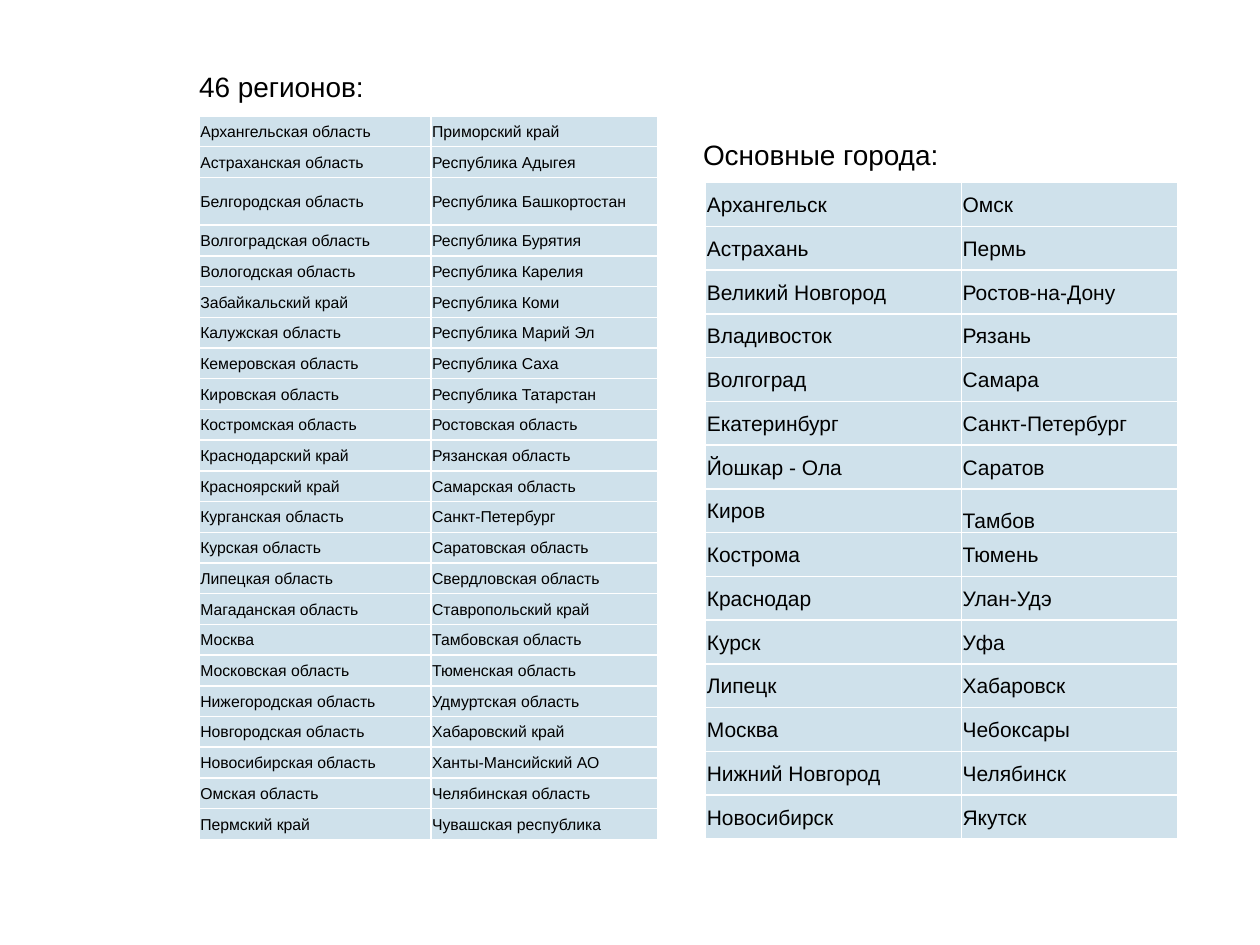
"""Builds the slide listing 46 regions and the main cities in two tables."""
from lxml import etree
from pptx import Presentation
from pptx.dml.color import RGBColor
from pptx.enum.text import MSO_ANCHOR, MSO_AUTO_SIZE, PP_ALIGN
from pptx.oxml.ns import qn
from pptx.util import Inches, Pt

TOP, MIDDLE, BOTTOM = MSO_ANCHOR.TOP, MSO_ANCHOR.MIDDLE, MSO_ANCHOR.BOTTOM
LEFT = PP_ALIGN.LEFT
NO_AUTOFIT = MSO_AUTO_SIZE.NONE
TITLE_ONLY = 5

THEME = {
    "font": "Arial", "ink": "000000", "cell": "438BB0", "cell_alpha": 25,
    "border": "FFFFFF", "border_pt": 1,
    "heading_pt": 16, "regions_pt": 9, "cities_pt": 12,
}

HEADINGS = [
    {"text": "46 регионов:", "indent": 0, "before": 0},
    {"text": "Основные города:", "indent": 4, "before": 20},
]

REGIONS = [
    ("Архангельская область", "Приморский край"),
    ("Астраханская область", "Республика Адыгея"),
    ("Белгородская область", "Республика Башкортостан"),
    ("Волгоградская область", "Республика Бурятия"),
    ("Вологодская область", "Республика Карелия"),
    ("Забайкальский край", "Республика Коми"),
    ("Калужская область", "Республика Марий Эл"),
    ("Кемеровская область", "Республика Саха"),
    ("Кировская область", "Республика Татарстан"),
    ("Костромская область", "Ростовская область"),
    ("Краснодарский край", "Рязанская область"),
    ("Красноярский край", "Самарская область"),
    ("Курганская область", "Санкт-Петербург"),
    ("Курская область", "Саратовская область"),
    ("Липецкая область", "Свердловская область"),
    ("Магаданская область", "Ставропольский край"),
    ("Москва", "Тамбовская область"),
    ("Московская область", "Тюменская область"),
    ("Нижегородская область", "Удмуртская область"),
    ("Новгородская область", "Хабаровский край"),
    ("Новосибирская область", "Ханты-Мансийский АО"),
    ("Омская область", "Челябинская область"),
    ("Пермский край", "Чувашская республика"),
]

CITIES = [
    ("Архангельск", "Омск"),
    ("Астрахань", "Пермь"),
    ("Великий Новгород", "Ростов-на-Дону"),
    ("Владивосток", "Рязань"),
    ("Волгоград", "Самара"),
    ("Екатеринбург", "Санкт-Петербург"),
    ("Йошкар - Ола", "Саратов"),
    ("Киров", "Тамбов"),
    ("Кострома", "Тюмень"),
    ("Краснодар", "Улан-Удэ"),
    ("Курск", "Уфа"),
    ("Липецк", "Хабаровск"),
    ("Москва", "Чебоксары"),
    ("Нижний Новгород", "Челябинск"),
    ("Новосибирск", "Якутск"),
]

TABLES = [
    {"rows": REGIONS, "left": 1.58, "top": 0.92, "height": 5.75,
     "columns": (1.84, 1.8), "size": THEME["regions_pt"],
     "tall_rows": {"Белгородская область": 0.38}, "low_cells": ()},
    {"rows": CITIES, "left": 5.6, "top": 1.45, "height": 5.21,
     "columns": (2.03, 1.72), "size": THEME["cities_pt"],
     "tall_rows": {}, "low_cells": ("Тамбов",)},
]


def write(paragraph, text, *, size, indent=0, before=0):
    properties = paragraph._p.get_or_add_pPr()
    properties.set("marL", str(Inches(indent)))
    properties.set("indent", "0")
    paragraph.alignment = LEFT
    paragraph.space_before = Pt(before)
    run = paragraph.add_run()
    run.text = text
    run.font.name = THEME["font"]
    run.font.size = Pt(size)
    run.font.color.rgb = RGBColor.from_string(THEME["ink"])


def paint_cell(cell):
    cell.fill.solid()
    cell.fill.fore_color.rgb = RGBColor.from_string(THEME["cell"])
    properties = cell._tc.get_or_add_tcPr()
    color = properties.find(qn("a:solidFill"))[0]
    etree.SubElement(color, qn("a:alpha"), val=str(THEME["cell_alpha"] * 1000))
    for position, side in enumerate(("a:lnL", "a:lnR", "a:lnT", "a:lnB")):
        border = etree.Element(qn(side), w=str(Pt(THEME["border_pt"])))
        fill = etree.SubElement(border, qn("a:solidFill"))
        etree.SubElement(fill, qn("a:srgbClr"), val=THEME["border"])
        properties.insert(position, border)


def add_headings(slide):
    title = slide.shapes.title
    title.left, title.top = Inches(1.48), Inches(0.5)
    title.width, title.height = Inches(7.87), Inches(6.33)
    frame = title.text_frame
    frame.word_wrap = True
    frame.auto_size = NO_AUTOFIT
    frame.vertical_anchor = TOP
    for index, heading in enumerate(HEADINGS):
        paragraph = frame.add_paragraph() if index else frame.paragraphs[0]
        write(paragraph, size=THEME["heading_pt"], **heading)


def add_listing(slide, listing):
    rows, columns, tall_rows = listing["rows"], listing["columns"], listing["tall_rows"]
    table = slide.shapes.add_table(
        len(rows), len(columns), Inches(listing["left"]), Inches(listing["top"]),
        Inches(sum(columns)), Inches(listing["height"])).table
    table.first_row = table.horz_banding = False
    for column, width in zip(table.columns, columns):
        column.width = Inches(width)
    row_height = (listing["height"] - sum(tall_rows.values())) / (len(rows) - len(tall_rows))
    for row, names in zip(table.rows, rows):
        row.height = Inches(tall_rows.get(names[0], row_height))
        for cell, name in zip(row.cells, names):
            cell.margin_left = cell.margin_right = cell.margin_top = Inches(0.01)
            cell.margin_bottom = 0
            cell.vertical_anchor = BOTTOM if name in listing["low_cells"] else MIDDLE
            paint_cell(cell)
            write(cell.text_frame.paragraphs[0], name, size=listing["size"])


def main():
    deck = Presentation()
    deck.slide_width, deck.slide_height = Inches(10), Inches(7.5)
    slide = deck.slides.add_slide(deck.slide_layouts[TITLE_ONLY])
    add_headings(slide)
    for listing in TABLES:
        add_listing(slide, listing)
    deck.save("out.pptx")


if __name__ == "__main__":
    main()
